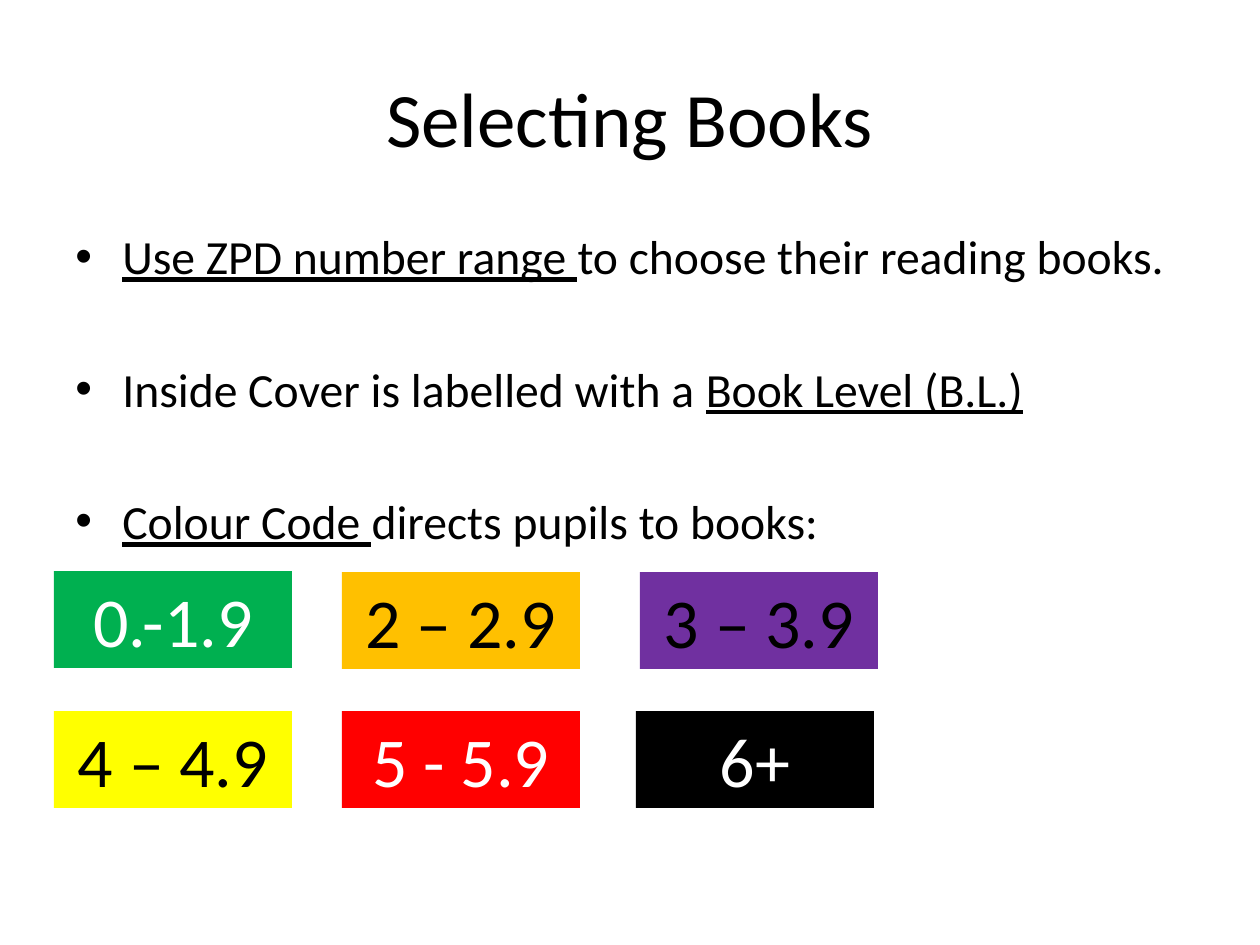
from pptx import Presentation
from pptx.dml.color import RGBColor
from pptx.enum.shapes import MSO_SHAPE as Shape
from pptx.enum.text import MSO_ANCHOR as Anchor, MSO_AUTO_SIZE as AutoSize, PP_ALIGN as Align
from pptx.oxml.ns import qn
from pptx.util import Emu, Pt
from lxml.etree import SubElement

EMU_PER_PX = 914400 / 126

BLACK = RGBColor(0x00, 0x00, 0x00)
WHITE = RGBColor(0xFF, 0xFF, 0xFF)
GREEN = RGBColor(0x00, 0xB0, 0x50)
AMBER = RGBColor(0xFF, 0xC0, 0x00)
PURPLE = RGBColor(0x70, 0x30, 0xA0)
YELLOW = RGBColor(0xFF, 0xFF, 0x00)
RED = RGBColor(0xFF, 0x00, 0x00)

TITLE_FONT = {"name": "Calibri", "size": Pt(44)}
BULLET_FONT = {"name": "Calibri", "size": Pt(27.2)}
LEVEL_FONT = {"name": "Calibri", "size": Pt(40)}

BULLETS = [
    [("Use ZPD number range ", True), ("to choose their reading books.", False)],
    [("Inside Cover is labelled with a ", False), ("Book Level (B.L.)", True)],
    [("Colour Code ", True), ("directs pupils to books:", False)],
]
LEVELS = [
    (0, 0, "0.-1.9", GREEN, WHITE),
    (288, 1, "2 – 2.9", AMBER, BLACK),
    (586, 1, "3 – 3.9", PURPLE, BLACK),
    (0, 140, "4 – 4.9", YELLOW, BLACK),
    (288, 140, "5 - 5.9", RED, WHITE),
    (582, 140, "6+", BLACK, WHITE),
]


def px(length):
    return Emu(round(length * EMU_PER_PX))


def add_span(para, text, color, font):
    span = para.add_run()
    span.text = text
    span.font.color.rgb = color
    for name, value in font.items():
        setattr(span.font, name, value)


def add_box(page, box, fill):
    shape = page.shapes.add_shape(Shape.RECTANGLE, *map(px, box))
    shape.shadow.inherit = False
    shape.fill.solid()
    shape.fill.fore_color.rgb = fill
    shape.line.fill.background()
    shape.text_frame.word_wrap = True
    shape.text_frame.vertical_anchor = Anchor.TOP
    return shape


def add_title(page, box):
    frame = page.shapes.add_textbox(*map(px, box)).text_frame
    frame.word_wrap = True
    frame.vertical_anchor = Anchor.MIDDLE
    para = frame.paragraphs[0]
    para.alignment = Align.CENTER
    add_span(para, "Selecting Books", BLACK, TITLE_FONT)


def add_bullets(page, box):
    shape = add_box(page, box, WHITE)
    shape.line.color.rgb = WHITE
    shape.line.width = Pt(0.75)
    frame = shape.text_frame
    for index, spans in enumerate(BULLETS):
        para = frame.add_paragraph() if index else frame.paragraphs[0]
        para.alignment = Align.LEFT
        para.space_before = Pt(43 if index else 0)
        props = para._p.get_or_add_pPr()
        props.set("marL", str(px(47)))
        props.set("indent", str(px(-47)))
        SubElement(props, qn("a:buFont"), typeface="Arial")
        SubElement(props, qn("a:buChar"), char="•")
        for text, underline in spans:
            add_span(para, text, BLACK, {**BULLET_FONT, "underline": underline})


def add_levels(page, box):
    left, top, width, height = box
    for across, down, label, fill, color in LEVELS:
        shape = add_box(page, (left + across, top + down, width, height), fill)
        shape.text_frame.auto_size = AutoSize.SHAPE_TO_FIT_TEXT
        para = shape.text_frame.paragraphs[0]
        para.alignment = Align.CENTER
        add_span(para, label, color, LEVEL_FONT)


def main():
    deck = Presentation()
    deck.slide_width, deck.slide_height = px(1260), px(945)
    page = deck.slides.add_slide(deck.slide_layouts[6])
    add_title(page, (63, 38, 1134, 157))
    add_bullets(page, (63, 221, 1134, 351))
    add_levels(page, (54, 571, 238, 97))
    deck.save("out.pptx")


if __name__ == "__main__":
    main()
